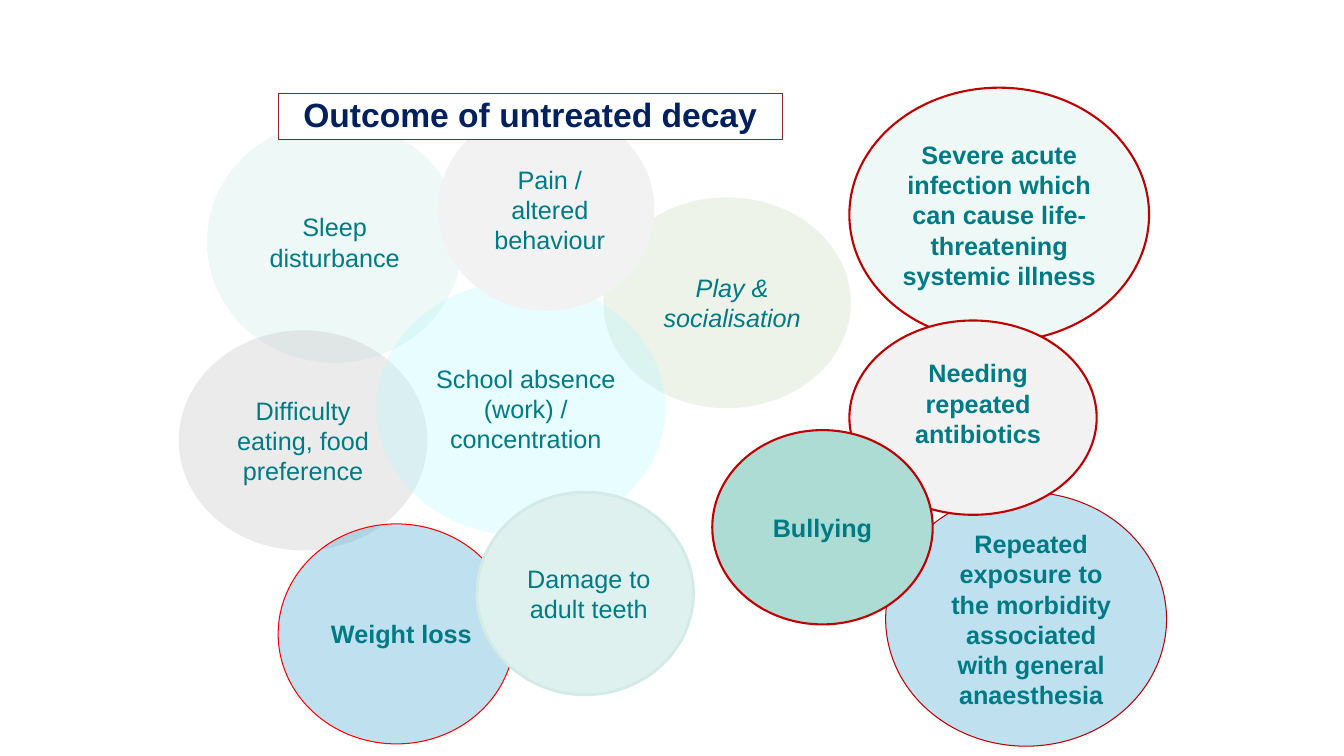
from dataclasses import dataclass
from lxml.etree import SubElement
from pptx import Presentation
from pptx.dml.color import RGBColor
from pptx.enum.shapes import MSO_SHAPE
from pptx.enum.text import MSO_ANCHOR, PP_ALIGN
from pptx.oxml.ns import qn
from pptx.util import Inches, Pt

WIDE, HIGH = Inches(13.333), Inches(7.5)


@dataclass(frozen=True)
class Theme:
    font: str = "Arial"
    body: int = 18
    head: int = 24
    teal: str = "007B85"
    navy: str = "002060"
    white: str = "FFFFFF"
    mint: str = "EEF8F6"
    grey: str = "F2F2F2"
    ash: str = "BFBFBF"
    sage: str = "EEF3EA"
    aqua: str = "B0F9FF"
    blue: str = "2B99CD"
    pale: str = "DEF1EE"
    rim: str = "D2EBE6"
    jade: str = "ACDCD4"
    red: str = "FF0000"
    dark: str = "C00000"
    wine: str = "932121"


THEME = Theme()


@dataclass(frozen=True)
class Item:
    text: str
    left: float
    top: float
    width: float
    height: float
    fill: str
    alpha: int = 100
    line: str = ""
    weight: float = 1.5
    bold: bool = False
    slant: bool = False
    indent: float = 0
    after: float = 0
    foot: float = 0.04


HEAD = Item("Outcome of untreated decay", 20.7, 12.4, 37.5, 6.1, THEME.white,
            line=THEME.wine, weight=0.75, bold=True)

ITEMS = [
    Item("Sleep disturbance", 15.4, 16, 19, 32, THEME.mint, after=4.5),
    Item("Difficulty eating, food preference", 13.3, 43.7, 18.5, 29.1, THEME.ash,
         alpha=30, after=4.5),
    Item("Play & socialisation", 44.9, 26.1, 18.4, 27.9, THEME.sage,
         slant=True, indent=0.1),
    Item("School absence (work) / concentration", 28, 37.2, 21.5, 33.6, THEME.aqua,
         alpha=30, indent=0.1),
    Item("Pain / altered behaviour", 32.6, 14.3, 16.1, 26.8, THEME.grey,
         indent=0.07, after=4.5),
    Item("Weight loss", 20.7, 69.3, 17.6, 29.1, THEME.blue,
         alpha=30, line=THEME.red, weight=0.75, bold=True, indent=0.1),
    Item("Damage to adult teeth", 35.5, 65.1, 16.1, 26.8, THEME.pale,
         line=THEME.rim, weight=2, indent=0.07, after=4.5),
    Item("Severe acute infection which can cause life-threatening systemic illness",
         63.2, 11.6, 22.3, 33.6, THEME.mint, line=THEME.dark, bold=True, after=4.5),
    Item("Repeated exposure to the morbidity associated with general anaesthesia",
         65.9, 65.1, 20.9, 33.6, THEME.blue, alpha=30, line=THEME.dark,
         weight=0.75, bold=True, indent=0.1),
    Item("Needing repeated antibiotics", 63.2, 42.4, 18.4, 25.7, THEME.grey,
         line=THEME.dark, bold=True, indent=0.1, foot=0.33),
    Item("Bullying", 53, 56.9, 16.4, 25.7, THEME.jade,
         line=THEME.dark, bold=True, after=4.5),
]


def draw(slide, item: Item, kind: MSO_SHAPE, size: int, ink: str):
    shape = slide.shapes.add_shape(
        kind,
        round(WIDE * item.left / 100), round(HIGH * item.top / 100),
        round(WIDE * item.width / 100), round(HIGH * item.height / 100))
    shape.shadow.inherit = False
    shape.fill.solid()
    shape.fill.fore_color.rgb = RGBColor.from_string(item.fill)
    if item.alpha < 100:
        tint = shape._element.spPr.find(qn("a:solidFill")).find(qn("a:srgbClr"))
        SubElement(tint, qn("a:alpha")).set("val", str(item.alpha * 1000))
    if item.line:
        shape.line.color.rgb = RGBColor.from_string(item.line)
        shape.line.width = Pt(item.weight)
    else:
        shape.line.fill.background()

    frame = shape.text_frame
    frame.text = item.text
    frame.word_wrap = True
    frame.vertical_anchor = MSO_ANCHOR.MIDDLE
    frame.margin_left = frame.margin_right = Inches(0.07)
    frame.margin_top = Inches(0.04)
    frame.margin_bottom = Inches(item.foot)
    para = frame.paragraphs[0]
    para.alignment = PP_ALIGN.CENTER
    para.space_after = Pt(item.after)
    para._p.get_or_add_pPr().set("marL", str(Inches(item.indent)))
    font = para.runs[0].font
    font.name = THEME.font
    font.size = Pt(size)
    font.bold = item.bold
    font.italic = item.slant
    font.color.rgb = RGBColor.from_string(ink)
    return shape


def main() -> None:
    deck = Presentation()
    deck.slide_width, deck.slide_height = WIDE, HIGH
    slide = deck.slides.add_slide(deck.slide_layouts[6])
    for item in ITEMS:
        draw(slide, item, MSO_SHAPE.OVAL, THEME.body, THEME.teal)
    title = draw(slide, HEAD, MSO_SHAPE.RECTANGLE, THEME.head, THEME.navy)
    title.text_frame.paragraphs[0].line_spacing = 0.9
    deck.save("out.pptx")


if __name__ == "__main__":
    main()
